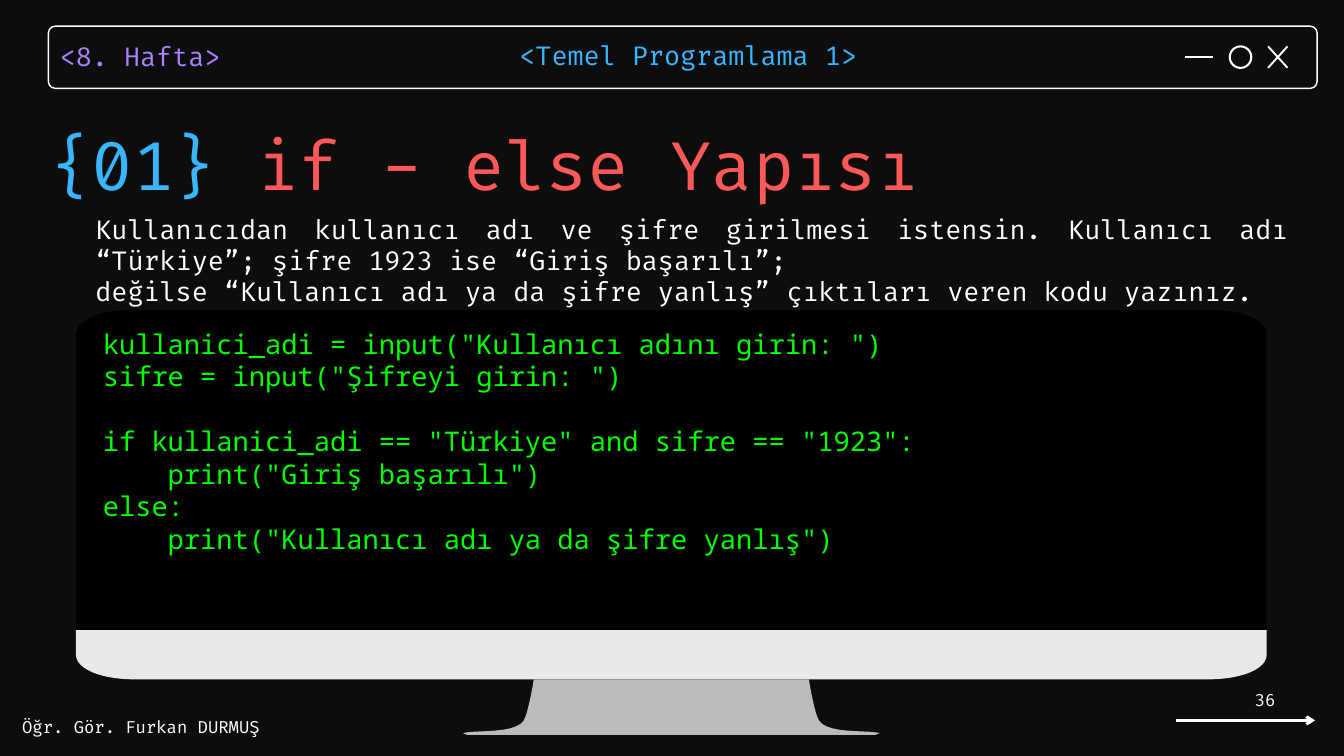
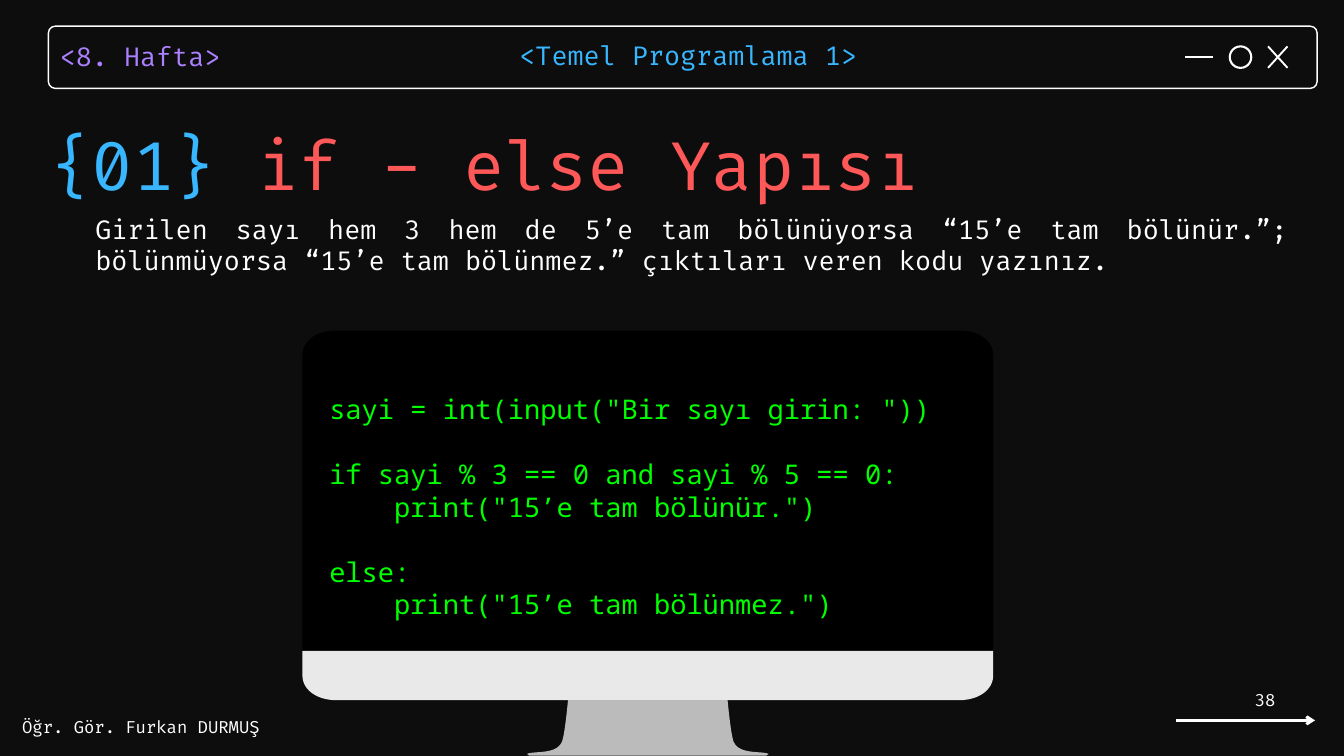
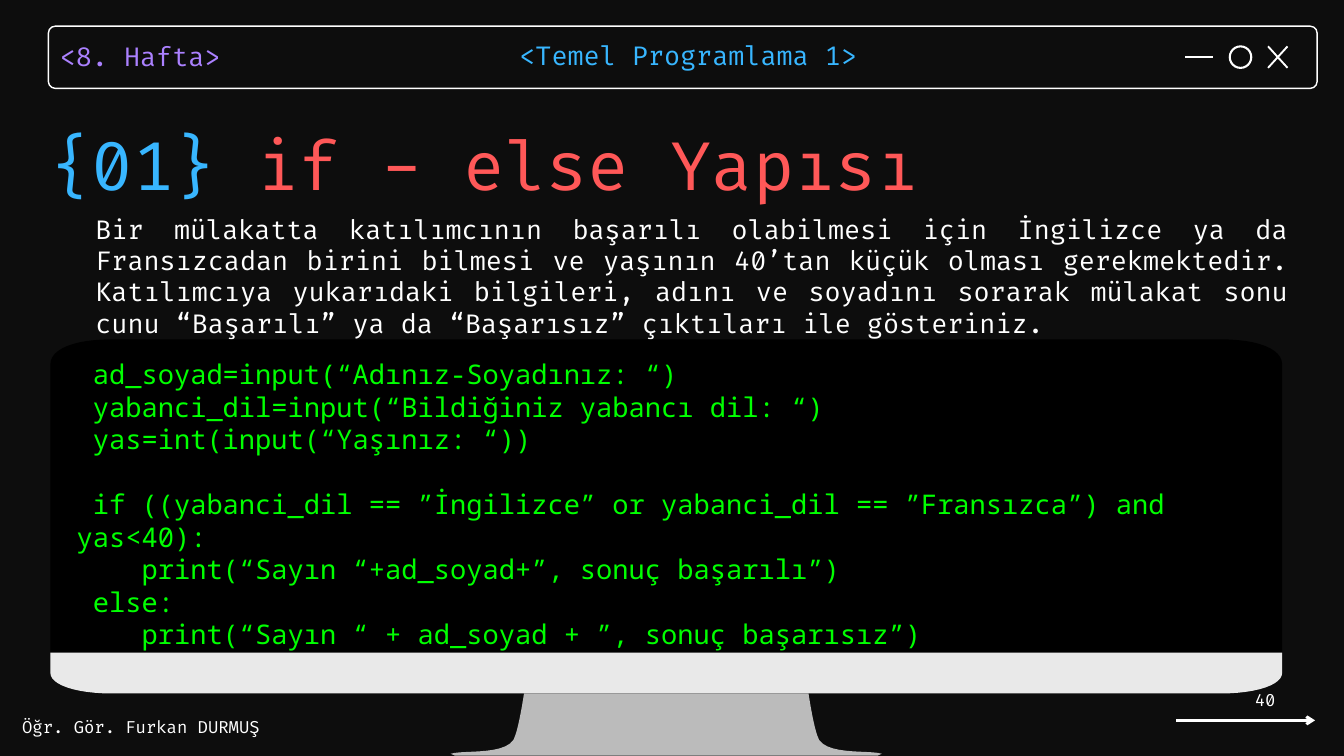
from dataclasses import dataclass

from lxml.etree import SubElement
from pptx import Presentation
from pptx.dml.color import RGBColor
from pptx.enum.shapes import MSO_CONNECTOR, MSO_SHAPE
from pptx.enum.text import MSO_ANCHOR, MSO_AUTO_SIZE, PP_ALIGN
from pptx.oxml.ns import qn
from pptx.util import Inches, Pt

COLS, ROWS = 80, 45
TITLE_ONLY = 5


@dataclass(frozen=True)
class Theme:
    back: str = "0D0D0D"
    white: str = "FFFFFF"
    purple: str = "AB81FF"
    blue: str = "38B6FF"
    red: str = "FF5858"
    green: str = "00FF00"
    black: str = "000000"
    chin: str = "E9E9E9"
    stand: str = "BBBBBB"
    font: str = "Fira Code"
    mono: str = "Noto Sans Mono"
    title: float = 72
    title_line: float = 102.6
    body: float = 28
    body_line: float = 39.2
    code: float = 29
    code_gap: float = 35
    small: float = 18


def bezier(a, b, c, d, steps=12):
    for i in range(steps + 1):
        t = i / steps
        u = 1 - t
        yield tuple(u**3 * p + 3 * u * u * t * q + 3 * u * t * t * r + t**3 * s
                    for p, q, r, s in zip(a, b, c, d))


BODY_HALF = [(0, 1), *bezier((0, 0.08), (0, 0.03), (0.02, 0), (0.05, 0))]
CHIN_HALF = [(0, 0), *bezier((0, 0.5), (0, 0.78), (0.02, 1), (0.05, 1))]
STAND_HALF = [*bezier((0.17, 0), (0.17, 0), (0.16, 0.47), (0.15, 0.67)),
              *bezier((0.15, 0.67), (0.14, 1.01), (0.03, 0.9), (0, 0.97)),
              (0.01, 1)]


class Deck:
    def __init__(self, prs, theme):
        self.prs, self.theme = prs, theme
        self.slide = None
        fill = prs.slide_master.background.fill
        fill.solid()
        fill.fore_color.rgb = RGBColor.from_string(theme.back)

    def x(self, cols):
        return int(self.prs.slide_width * cols / COLS)

    def y(self, rows):
        return int(self.prs.slide_height * rows / ROWS)

    def box(self, left, top, width, height):
        return self.x(left), self.y(top), self.x(width), self.y(height)

    def stroke(self, line, color, width):
        line.color.rgb = RGBColor.from_string(color)
        line.width = Pt(width)

    def frame(self, tf, anchor=MSO_ANCHOR.TOP, inset=0):
        tf.word_wrap = True
        tf.auto_size = MSO_AUTO_SIZE.NONE
        tf.vertical_anchor = anchor
        tf.margin_left = tf.margin_right = Inches(inset)
        tf.margin_top = tf.margin_bottom = Inches(inset / 2)

    def run(self, p, text, size, color, font=None):
        r = p.add_run()
        r.text = text
        r.font.size = Pt(size)
        r.font.name = font or self.theme.font
        r.font.color.rgb = RGBColor.from_string(color)

    def text(self, box, lines, size, color, align=PP_ALIGN.LEFT, spacing=None,
             font=None, gap=0, **frame):
        tf = self.slide.shapes.add_textbox(*self.box(*box)).text_frame
        self.frame(tf, **frame)
        p, skipped = None, 0
        for line in lines:
            if not line:
                skipped += 1
                continue
            p = tf.add_paragraph() if p else tf.paragraphs[0]
            p.alignment = align
            if spacing:
                p.line_spacing = Pt(spacing)
            if skipped:
                p.space_before = Pt(gap * skipped)
            self.run(p, line, size, color, font)
            skipped = 0

    def shape(self, kind, box, fill=None, line=None, width=1):
        sp = self.slide.shapes.add_shape(kind, *self.box(*box))
        sp.shadow.inherit = False
        if fill:
            sp.fill.solid()
            sp.fill.fore_color.rgb = RGBColor.from_string(fill)
        else:
            sp.fill.background()
        self.stroke(sp.line, line, width)
        return sp

    def line(self, x1, y1, x2, y2, width, arrow=False):
        cn = self.slide.shapes.add_connector(
            MSO_CONNECTOR.STRAIGHT, self.x(x1), self.y(y1), self.x(x2), self.y(y2))
        self.stroke(cn.line, self.theme.white, width)
        if arrow:
            SubElement(cn.line._get_or_add_ln(), qn("a:tailEnd"), type="arrow")
        SubElement(cn._element.spPr, qn("a:effectLst"))

    def symmetric(self, box, half, fill):
        left, top, width, height = self.box(*box)
        outline = half + [(1 - px, py) for px, py in reversed(half)]
        pts = [(left + px * width, top + py * height) for px, py in outline]
        fb = self.slide.shapes.build_freeform(*pts[0])
        fb.add_line_segments(pts[1:], close=True)
        sp = fb.convert_to_shape()
        sp.shadow.inherit = False
        sp.fill.solid()
        sp.fill.fore_color.rgb = RGBColor.from_string(fill)
        sp.line.fill.background()

    def title(self, number, words):
        t = self.theme
        sp = self.slide.shapes.title
        sp.left, sp.top, sp.width, sp.height = self.box(3, 6.44, 77, 5.52)
        self.frame(sp.text_frame)
        p = sp.text_frame.paragraphs[0]
        p.alignment = PP_ALIGN.LEFT
        p.line_spacing = Pt(t.title_line)
        self.run(p, number + " ", t.title, t.blue)
        self.run(p, words, t.title, t.red)

    def header(self):
        t = self.theme
        bar = self.shape(MSO_SHAPE.ROUNDED_RECTANGLE, (2.88, 1.56, 75.52, 3.7),
                         line=t.white, width=1.5)
        bar.adjustments[0] = 0.11
        self.text((3.56, 2.08, 13.6, 2.12), ["<8. Hafta>"], t.body, t.purple,
                  spacing=t.body_line)
        self.text((30.92, 2.04, 21.16, 2.12), ["<Temel Programlama 1>"], t.body,
                  t.blue, spacing=t.body_line)
        self.line(70.56, 3.4, 72.2, 3.4, 2)
        self.shape(MSO_SHAPE.OVAL, (73.2, 2.76, 1.28, 1.28), line=t.white, width=2.25)
        for start, end in ((2.76, 4.04), (4.04, 2.76)):
            self.line(75.48, start, 76.64, end, 2)

    def footer(self, page):
        t = self.theme
        self.text((1.32, 42.68, 14.68, 1.2), ["Öğr. Gör. Furkan DURMUŞ"],
                  t.small, t.white)
        self.text((67, 40.84, 9.32, 1.6), [str(page)], t.small, t.white,
                  align=PP_ALIGN.RIGHT, anchor=MSO_ANCHOR.MIDDLE, inset=0.1)
        self.line(70, 42.88, 78.28, 42.88, 3, arrow=True)

    def monitor(self, left, top, width, body, chin, stand):
        t = self.theme
        self.symmetric((left, top, width, body), BODY_HALF, t.black)
        self.symmetric((left, top + body, width, chin), CHIN_HALF, t.chin)
        self.symmetric((left + 0.325 * width, top + body + chin, 0.35 * width, stand),
                       STAND_HALF, t.stand)
        self.shape(MSO_SHAPE.RECTANGLE,
                   (left + 0.043 * width, top + 0.06 * body, 0.92 * width, 0.89 * body),
                   t.black, t.black, 2)

    def exercise(self, page, task, task_rows, monitor, code_box, code):
        t = self.theme
        self.slide = self.prs.slides.add_slide(self.prs.slide_layouts[TITLE_ONLY])
        self.header()
        self.footer(page)
        self.title("{01}", "if - else Yapısı")
        self.text((5.68, 12.68, 70.92, task_rows), task, t.body, t.white,
                  align=PP_ALIGN.JUSTIFY)
        self.monitor(*monitor)
        self.text(code_box, code, t.code, t.green, font=t.mono, gap=t.code_gap)


def main():
    prs = Presentation()
    prs.slide_width, prs.slide_height = Inches(20), Inches(11.25)
    deck = Deck(prs, Theme())
    deck.exercise(
        36,
        ["Kullanıcıdan kullanıcı adı ve şifre girilmesi istensin. Kullanıcı adı "
         "“Türkiye”; şifre 1923 ise “Giriş başarılı”;",
         "değilse “Kullanıcı adı ya da şifre yanlış” çıktıları veren kodu yazınız."],
        5.64,
        (4.52, 18.44, 70.88, 19.06, 2.94, 3.3),
        (6.12, 19.48, 69.36, 13.68),
        ['kullanici_adi = input("Kullanıcı adını girin: ")',
         'sifre = input("Şifreyi girin: ")',
         "",
         'if kullanici_adi == "Türkiye" and sifre == "1923":',
         '    print("Giriş başarılı")',
         "else:",
         '    print("Kullanıcı adı ya da şifre yanlış")'])
    deck.exercise(
        38,
        ["Girilen sayı hem 3 hem de 5’e tam bölünüyorsa “15’e tam bölünür.”; "
         "bölünmüyorsa “15’e tam bölünmez.” çıktıları veren kodu yazınız."],
        3.76,
        (18, 19.68, 41.12, 19.06, 2.94, 3.3),
        (19.6, 23.36, 40.24, 13.68),
        ['sayi = int(input("Bir sayı girin: "))',
         "",
         "if sayi % 3 == 0 and sayi % 5 == 0:",
         '    print("15’e tam bölünür.")',
         "",
         "else:",
         '    print("15’e tam bölünmez.")'])
    deck.exercise(
        40,
        ["Bir mülakatta katılımcının başarılı olabilmesi için İngilizce ya da "
         "Fransızcadan birini bilmesi ve yaşının 40’tan küçük olması gerekmektedir. "
         "Katılımcıya yukarıdaki bilgileri, adını ve soyadını sorarak mülakat sonu "
         "cunu “Başarılı” ya da “Başarısız” çıktıları ile gösteriniz."],
        7.52,
        (3, 20.2, 73.32, 18.64, 2.44, 3.7),
        (4.56, 21.28, 71.76, 15.6),
        [" ad_soyad=input(“Adınız-Soyadınız: “)",
         " yabanci_dil=input(“Bildiğiniz yabancı dil: “)",
         " yas=int(input(“Yaşınız: “))",
         "",
         " if ((yabanci_dil == ”İngilizce” or yabanci_dil == ”Fransızca”) and yas<40):",
         "    print(“Sayın “+ad_soyad+”, sonuç başarılı”)",
         " else:",
         "    print(“Sayın “ + ad_soyad + ”, sonuç başarısız”)"])
    prs.save("out.pptx")


if __name__ == "__main__":
    main()
